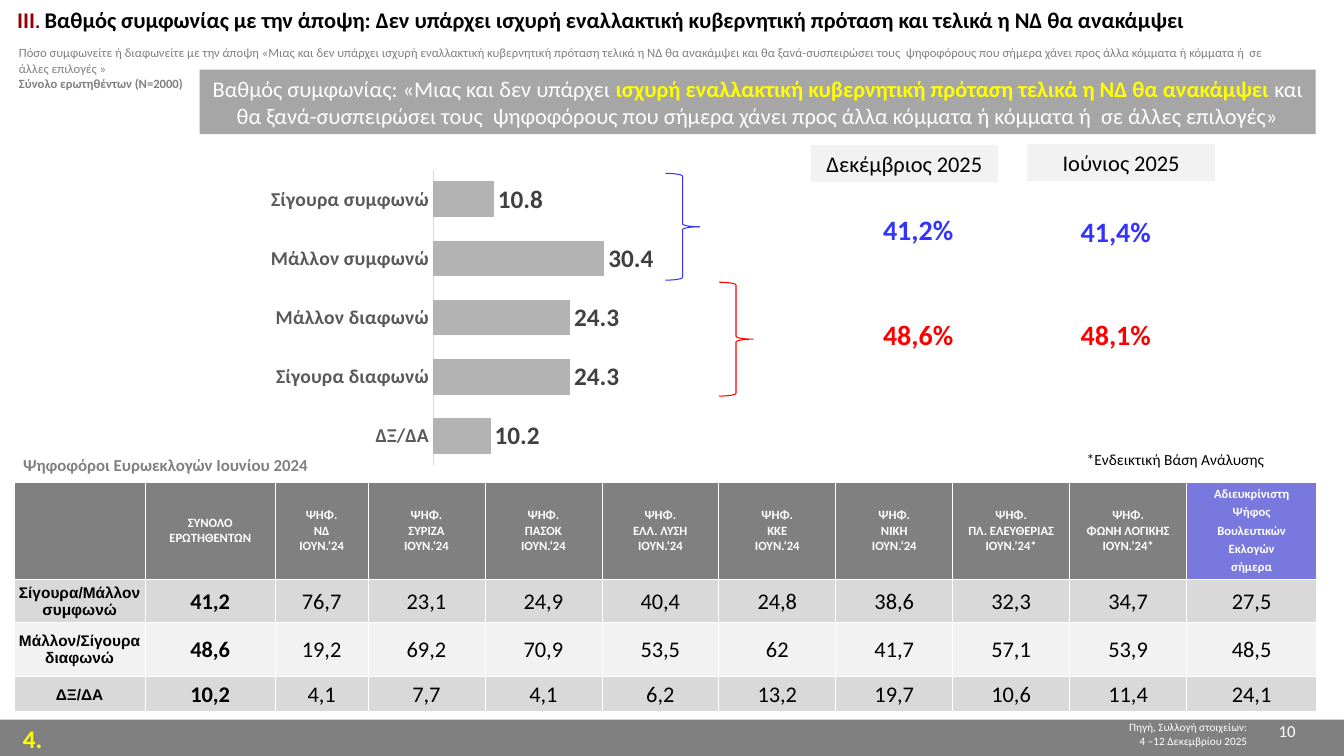
from dataclasses import dataclass

import lxml.etree
import pptx
import pptx.chart.data
import pptx.dml.color
import pptx.enum.chart
import pptx.enum.shapes
import pptx.enum.text
import pptx.oxml
import pptx.oxml.ns
import pptx.util

PX = 9144  # EMU in one px, 100 px to the inch
Align = pptx.enum.text.PP_ALIGN
Anchor = pptx.enum.text.MSO_ANCHOR
Shape = pptx.enum.shapes.MSO_SHAPE


@dataclass(frozen=True)
class Theme:
    white: str = "FFFFFF"
    black: str = "000000"
    gray: str = "808080"
    band: str = "A6A6A6"
    bar: str = "B3B3B3"
    pale: str = "F2F2F2"
    rule: str = "D9D9D9"
    axis: str = "595959"
    value: str = "404040"
    violet: str = "7878DE"
    blue: str = "3333FF"
    red: str = "FF0000"
    yellow: str = "FFFF00"
    wine: str = "990000"
    maroon: str = "800000"
    face: str = "Calibri"
    label: str = "Arial"
    chart: str = "Cabin"
    tiny: int = 8
    small: int = 9
    note: int = 11
    mid: int = 12
    text: int = 14
    main: int = 16
    large: int = 18
    huge: int = 20


T = Theme()


@dataclass(frozen=True)
class Box:
    x: int
    y: int
    w: int
    h: int

    def emu(self) -> tuple[int, ...]:
        return tuple(n * PX for n in (self.x, self.y, self.w, self.h))


@dataclass(frozen=True)
class Span:
    text: str
    size: int
    ink: str
    bold: bool = False
    face: str = T.face


Lines = list[list[Span]]


@dataclass(frozen=True)
class Note:
    box: Box
    lines: Lines
    align: Align = Align.LEFT
    wrap: bool = True


@dataclass(frozen=True)
class Panel:
    box: Box
    fill: str
    lines: Lines


@dataclass(frozen=True)
class Brace:
    box: Box
    ink: str


def rgb(ink: str) -> pptx.dml.color.RGBColor:
    return pptx.dml.color.RGBColor.from_string(ink)


def style(font, size: int, ink: str, bold: bool = False, face: str = T.face) -> None:
    font.size, font.bold, font.name = pptx.util.Pt(size), bold, face
    font.color.rgb = rgb(ink)


def write(frame, lines: Lines, align: Align, gap: int = 0) -> None:
    for i, spans in enumerate(lines):
        para = frame.add_paragraph() if i else frame.paragraphs[0]
        para.alignment = align
        if i and gap:
            para.space_before = pptx.util.Pt(gap)
        for span in spans:
            run = para.add_run()
            run.text = span.text
            style(run.font, span.size, span.ink, span.bold, span.face)


def paint(shape, ink: str) -> None:
    shape.fill.solid()
    shape.fill.fore_color.rgb = rgb(ink)


def add_note(slide, note: Note) -> None:
    frame = slide.shapes.add_textbox(*note.box.emu()).text_frame
    frame.word_wrap = note.wrap
    write(frame, note.lines, note.align)


def add_panel(slide, panel: Panel) -> None:
    shape = slide.shapes.add_shape(Shape.RECTANGLE, *panel.box.emu())
    shape.shadow.inherit = False
    paint(shape, panel.fill)
    shape.line.fill.background()
    shape.text_frame.word_wrap = True
    write(shape.text_frame, panel.lines, Align.CENTER)


def add_brace(slide, brace: Brace) -> None:
    shape = slide.shapes.add_shape(Shape.RIGHT_BRACE, *brace.box.emu())
    shape.shadow.inherit = False
    shape.fill.background()
    shape.line.color.rgb, shape.line.width = rgb(brace.ink), pptx.util.Pt(0.75)


def add_title(slide, box: Box, spans: list[Span]) -> None:
    title = slide.shapes.title
    title.left, title.top, title.width, title.height = box.emu()
    paint(title, T.white)
    frame = title.text_frame
    frame.auto_size = pptx.enum.text.MSO_AUTO_SIZE.NONE
    frame.vertical_anchor = Anchor.TOP
    write(frame, [spans], Align.LEFT)


def place(chart, **parts: float) -> None:
    """Fix the inner plot area as fractions of the chart."""
    area = chart.plots[0]._element.getparent()
    for old in area.findall(pptx.oxml.ns.qn("c:layout")):
        area.remove(old)
    marks = {"layoutTarget": "inner", "xMode": "edge", "yMode": "edge", **parts}
    body = "".join(f'<c:{k} val="{v}"/>' for k, v in marks.items())
    area.insert(0, pptx.oxml.parse_xml(
        f'<c:layout {pptx.oxml.ns.nsdecls("c")}><c:manualLayout>{body}</c:manualLayout></c:layout>'))


def add_bars(slide, box: Box, data: dict[str, float]) -> None:
    source = pptx.chart.data.CategoryChartData(number_format="0.0")
    source.categories = list(data)
    source.add_series("Series 1", list(data.values()))
    kinds = pptx.enum.chart
    chart = slide.shapes.add_chart(kinds.XL_CHART_TYPE.BAR_CLUSTERED, *box.emu(), source).chart
    chart.has_title = chart.has_legend = False
    style(chart.font, T.text, T.black, face=T.chart)
    plot = chart.plots[0]
    plot.gap_width, plot.vary_by_categories = 65, False
    paint(plot.series[0].format, T.bar)
    plot.has_data_labels = True
    tags = plot.data_labels
    tags.show_value, tags.position = True, kinds.XL_LABEL_POSITION.OUTSIDE_END
    style(tags.font, T.large, T.value, True)
    cats, vals = chart.category_axis, chart.value_axis
    cats.reverse_order = True
    cats.major_tick_mark = kinds.XL_TICK_MARK.NONE
    cats.format.line.color.rgb, cats.format.line.width = rgb(T.rule), pptx.util.Pt(0.75)
    style(cats.tick_labels.font, T.text, T.axis, True)
    vals.minimum_scale, vals.maximum_scale, vals.major_unit = 0, 100, 20
    vals.has_major_gridlines = vals.visible = False
    place(chart, x=0.445, y=0.064, w=0.555, h=0.873)


def edge(cell) -> None:
    """Draw thin white borders on all sides of a cell."""
    props = cell._tc.get_or_add_tcPr()
    for i, side in enumerate("LRTB"):
        line = lxml.etree.Element(pptx.oxml.ns.qn(f"a:ln{side}"), w=str(pptx.util.Pt(0.5)))
        fill = lxml.etree.SubElement(line, pptx.oxml.ns.qn("a:solidFill"))
        lxml.etree.SubElement(fill, pptx.oxml.ns.qn("a:srgbClr"), val=T.white)
        props.insert(i, line)


def add_grid(slide, x: int, y: int, wide: list[int], tall: list[int], rows: list[list[str]]) -> None:
    box = Box(x, y, sum(wide), sum(tall))
    table = slide.shapes.add_table(len(tall), len(wide), *box.emu()).table
    table.horz_banding = False
    for col, w in zip(table.columns, wide):
        col.width = w * PX
    for r, (row, h) in enumerate(zip(rows, tall)):
        table.rows[r].height = h * PX
        for c, text in enumerate(row):
            cell = table.cell(r, c)
            cell.vertical_anchor = Anchor.MIDDLE
            last = c == len(wide) - 1
            if r == 0:
                fill = T.violet if last else T.gray
                look = (T.small, T.white, True)
            else:
                fill = T.rule if r % 2 else T.pale
                look = (T.main, T.black, c == 1) if c else (T.note, T.black, True, T.label)
                cell.margin_left = cell.margin_right = cell.margin_top = PX
                cell.margin_bottom = 0
            paint(cell, fill)
            edge(cell)
            if text:
                lines = [[Span(part, *look)] for part in text.split("\n")]
                write(cell.text_frame, lines, Align.CENTER, 2 if last else 0)


BARS = {"Σίγουρα συμφωνώ": 10.8, "Μάλλον συμφωνώ": 30.4, "Μάλλον διαφωνώ": 24.3,
        "Σίγουρα διαφωνώ": 24.3, "ΔΞ/ΔΑ": 10.2}
VOTES = [("NΔ", "‘24"), ("ΣΥΡΙΖΑ", "‘24"), ("ΠΑΣΟΚ", "‘24"), ("ΕΛΛ. ΛΥΣΗ", "‘24"), ("ΚΚΕ", "‘24"),
         ("ΝΙΚΗ", "‘24"), ("ΠΛ. ΕΛΕΥΘΕΡΙΑΣ", "’24*"), ("ΦΩΝΗ ΛΟΓΙΚΗΣ", "’24*")]
ROWS = [
    ["", "ΣΥΝΟΛΟ\nΕΡΩΤΗΘΕΝΤΩΝ", *(f"ΨΗΦ.\n{name}\nΙΟΥΝ.{year}" for name, year in VOTES),
     "Αδιευκρίνιστη\nΨήφος\nΒουλευτικών\nΕκλογών\nσήμερα"],
    ["Σίγουρα/Μάλλον συμφωνώ", *"41,2 76,7 23,1 24,9 40,4 24,8 38,6 32,3 34,7 27,5".split()],
    ["Μάλλον/Σίγουρα διαφωνώ", *"48,6 19,2 69,2 70,9 53,5 62 41,7 57,1 53,9 48,5".split()],
    ["ΔΞ/ΔΑ", *"10,2 4,1 7,7 4,1 6,2 13,2 19,7 10,6 11,4 24,1".split()],
]
TITLE = [Span("ΙΙI", T.main, T.wine, True), Span(". ", T.text, T.maroon, True),
         Span("Βαθμός συμφωνίας με την άποψη: Δεν υπάρχει ισχυρή εναλλακτική κυβερνητική πρόταση "
              "και τελικά η ΝΔ θα ανακάμψει", T.main, T.black, True)]
ASK = ("Πόσο συμφωνείτε ή διαφωνείτε με την άποψη «Μιας και δεν υπάρχει ισχυρή εναλλακτική κυβερνητική "
       "πρόταση τελικά η ΝΔ θα ανακάμψει και θα ξανά-συσπειρώσει τους  ψηφοφόρους που σήμερα χάνει "
       "προς άλλα κόμματα ή κόμματα ή  σε άλλες επιλογές »")
CLAIM = [Span("Βαθμός συμφωνίας: «Μιας και δεν υπάρχει ", T.main, T.white),
         Span("ισχυρή εναλλακτική κυβερνητική πρόταση τελικά η ΝΔ θα ανακάμψει ", T.main, T.yellow, True),
         Span("και θα ξανά-συσπειρώσει τους  ψηφοφόρους που σήμερα χάνει προς άλλα κόμματα ή κόμματα "
              "ή  σε άλλες επιλογές»", T.main, T.white)]
PANELS = [
    Panel(Box(0, 714, 1333, 36), T.gray, []),
    Panel(Box(198, 69, 1107, 64), T.band, [CLAIM]),
    Panel(Box(804, 144, 186, 37), T.pale, [[Span("Δεκέμβριος 2025", T.main, T.black)]]),
    Panel(Box(1019, 143, 186, 37), T.pale, [[Span("Ιούνιος 2025", T.main, T.black)]]),
]
SUMS = [(866, 206, "41,2%", T.blue), (1062, 208, "41,4%", T.blue),
        (866, 310, "48,6%", T.red), (1062, 310, "48,1%", T.red)]
NOTES = [
    Note(Box(13, 713, 67, 40), [[Span("4.", T.large, T.yellow, True)]]),
    Note(Box(958, 710, 289, 37), [[Span("Πηγή, Συλλογή στοιχείων:", T.tiny, T.white)],
                                  [Span("4 –12 Δεκεμβρίου 2025", T.tiny, T.white)]], Align.RIGHT),
    Note(Box(1231, 710, 64, 40), [[Span("10", T.mid, T.white)]], Align.RIGHT),
    Note(Box(9, 40, 1256, 56), [[Span(ASK, T.small, T.gray)],
                                [Span("Σύνολο ερωτηθέντων (Ν=2000)", T.small, T.gray, True)]]),
    Note(Box(13, 446, 311, 30), [[Span("Ψηφοφόροι Ευρωεκλογών Ιουνίου 2024", T.mid, T.gray, True)]], wrap=False),
    Note(Box(1068, 442, 201, 29), [[Span("*Ενδεικτική Βάση Ανάλυσης", T.note, T.black)]], wrap=False),
    *(Note(Box(x, y, 90, 44), [[Span(text, T.huge, ink, True)]], wrap=False) for x, y, text, ink in SUMS),
]
BRACES = [Brace(Box(660, 172, 34, 106), T.blue), Brace(Box(713, 280, 34, 113), T.red)]


def main() -> None:
    deck = pptx.Presentation()
    deck.slide_width, deck.slide_height = 1333 * PX, 750 * PX
    slide = deck.slides.add_slide(deck.slide_layouts.get_by_name("Title Only"))
    add_title(slide, Box(7, 1, 1256, 44), TITLE)
    add_bars(slide, Box(-19, 147, 1008, 336), BARS)
    for panel in PANELS:
        add_panel(slide, panel)
    for brace in BRACES:
        add_brace(slide, brace)
    add_grid(slide, 14, 478, [130, 129, 92, *[116] * 7, 129], [95, 42, 54, 35], ROWS)
    for note in NOTES:
        add_note(slide, note)
    deck.save("out.pptx")


if __name__ == "__main__":
    main()
